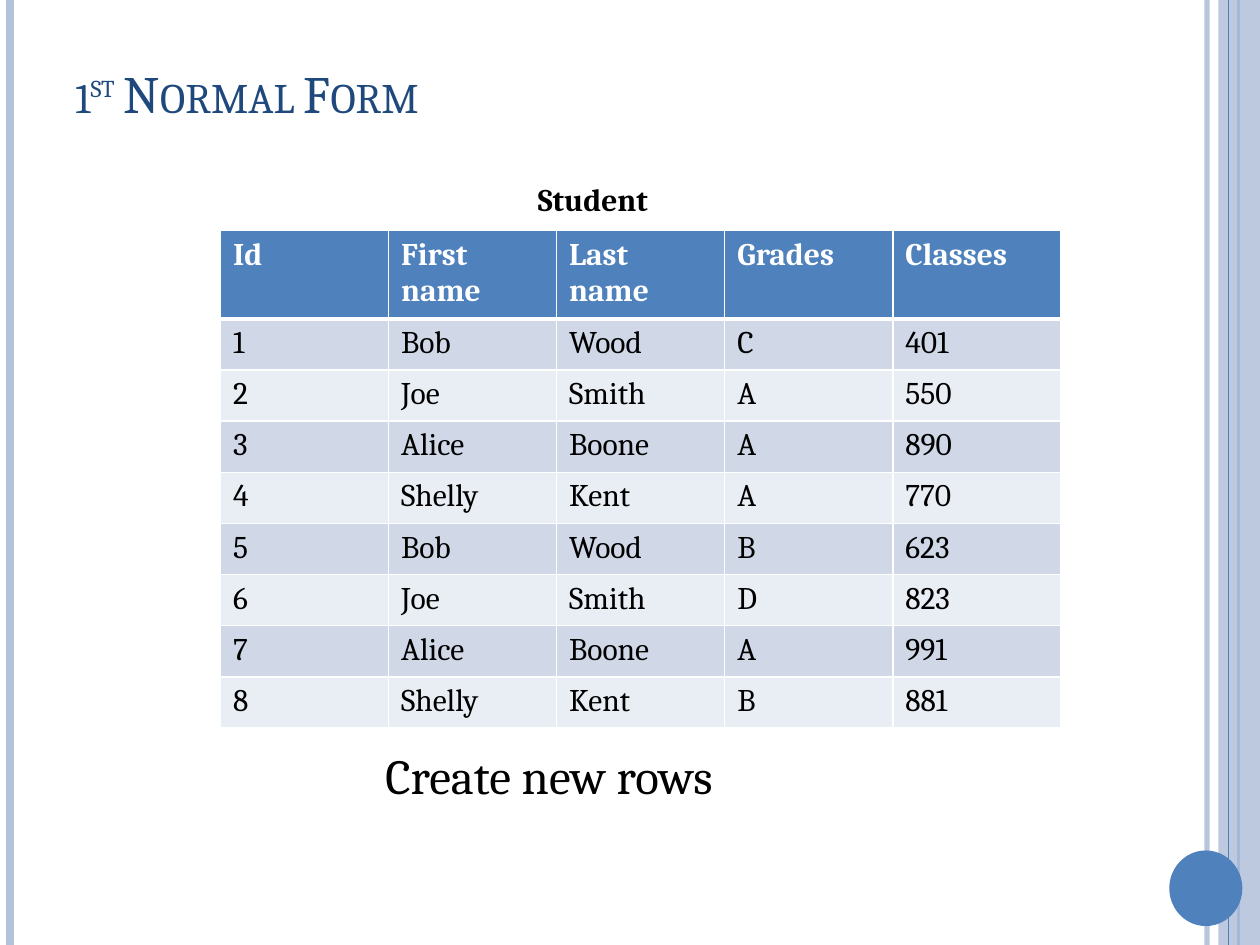
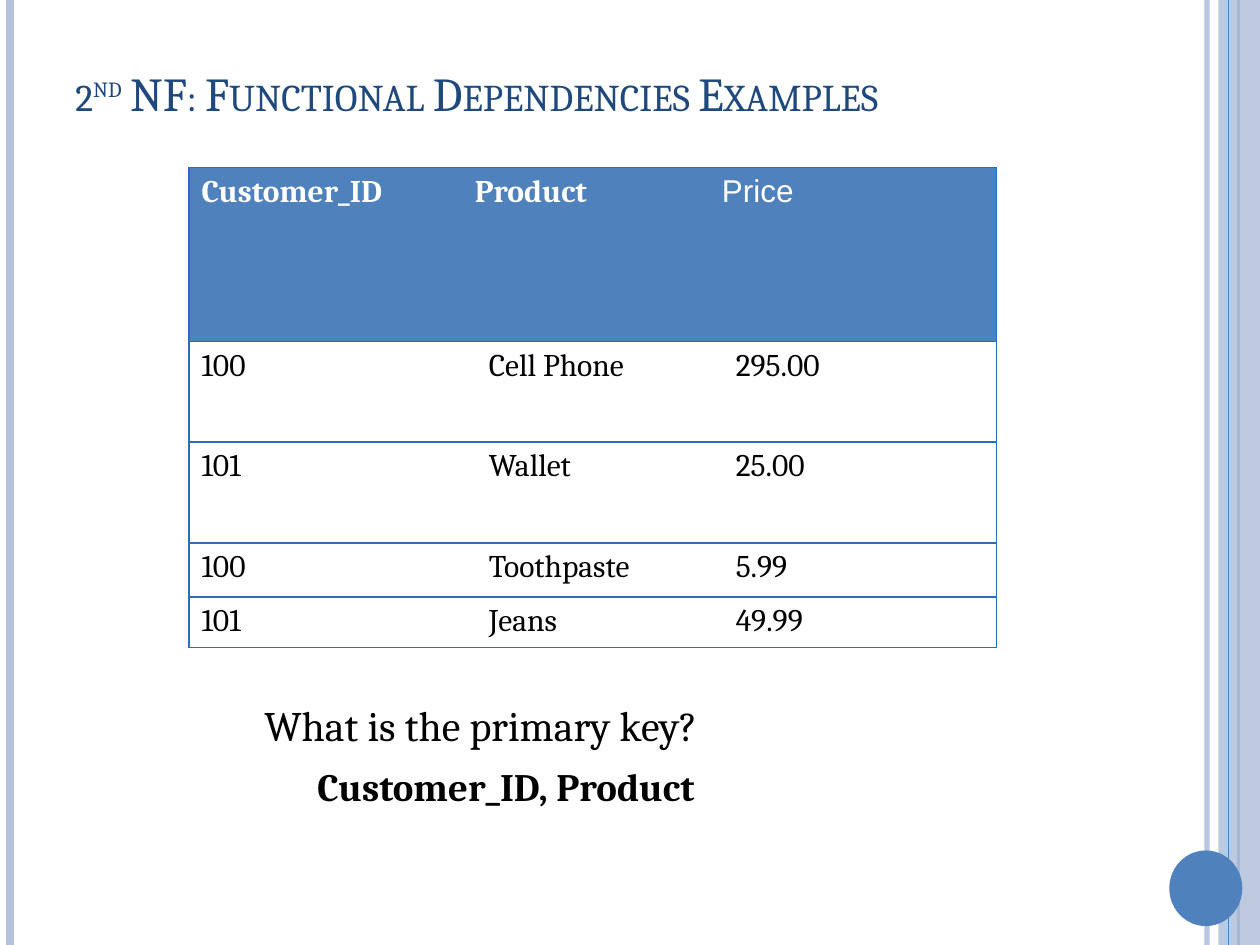
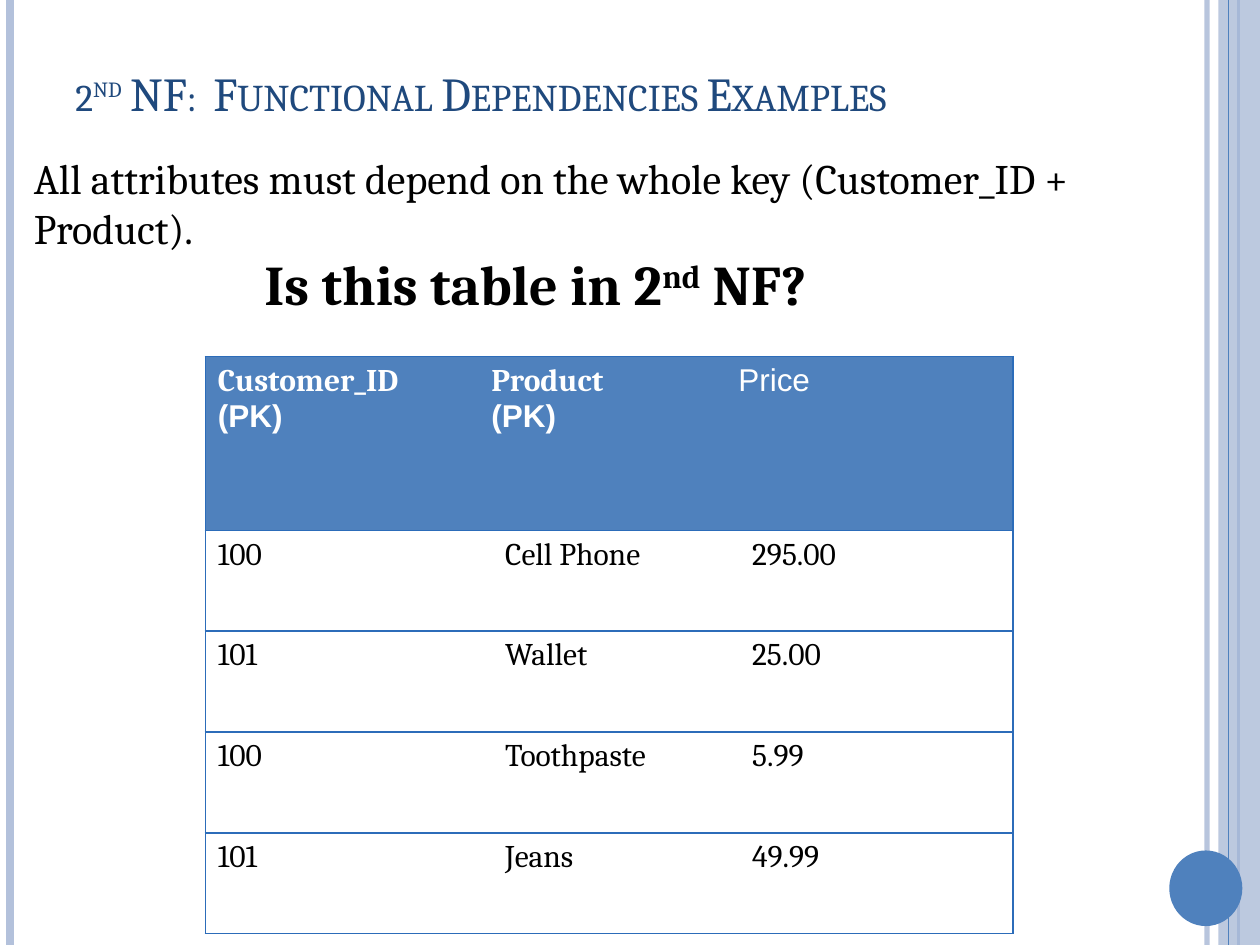
from dataclasses import dataclass, replace
from typing import Sequence

from lxml import etree
from pptx import Presentation
from pptx.dml.color import RGBColor
from pptx.enum.shapes import MSO_CONNECTOR, MSO_SHAPE
from pptx.enum.text import MSO_ANCHOR
from pptx.oxml.ns import qn
from pptx.util import Inches, Pt

STRAIGHT = MSO_CONNECTOR.STRAIGHT
RECTANGLE = MSO_SHAPE.RECTANGLE
OVAL = MSO_SHAPE.OVAL
TOP = MSO_ANCHOR.TOP
MIDDLE = MSO_ANCHOR.MIDDLE
BLANK_LAYOUT = 6
WIDTH, HEIGHT = 10, 7.5


@dataclass(frozen=True)
class TextStyle:
    size: float
    color: str = "000000"
    bold: bool = False
    font: str = "Cambria"
    small_caps: bool = False
    space_before: float = 0


@dataclass(frozen=True)
class Theme:
    accent: str = "4F81BD"
    band: str = "B3C1DB"
    white: str = "FFFFFF"
    grid: str = "2C6CB9"
    stripes: tuple[str, str] = ("D0D8E8", "E9EDF4")
    title: TextStyle = TextStyle(30, "1F497D", small_caps=True)
    long_title: TextStyle = TextStyle(27, "1F497D", small_caps=True)
    cell: TextStyle = TextStyle(18)
    caption: TextStyle = TextStyle(18, bold=True)
    header: TextStyle = TextStyle(18, "FFFFFF", bold=True)
    key_mark: TextStyle = TextStyle(18, "FFFFFF", bold=True, font="Arial")
    plain_header: TextStyle = TextStyle(18, "FFFFFF", font="Arial")
    note: TextStyle = TextStyle(28)
    body: TextStyle = TextStyle(24, space_before=6)
    answer: TextStyle = TextStyle(22.2, bold=True, space_before=6)
    question: TextStyle = TextStyle(32, bold=True, space_before=6)


THEME = Theme()


@dataclass(frozen=True)
class Frame:
    left: float
    top: float
    width: float
    height: float

    def inches(self) -> tuple:
        return tuple(map(Inches, (self.left, self.top, self.width, self.height)))


@dataclass(frozen=True)
class Rule:
    x: float
    color: str
    weight: float
    opacity: int = 100


@dataclass(frozen=True)
class Border:
    color: str
    weight: float


@dataclass(frozen=True)
class Line:
    text: str
    style: TextStyle


RULES_BEHIND_BAND = (
    Rule(9.58, THEME.band, 3, 93),
    Rule(0.08, THEME.band, 4.5),
    Rule(9.83, THEME.accent, 1.5),
)
RULE_OVER_BAND = Rule(9.75, THEME.accent, 0.75)
BAND = Frame(9.67, 0, 0.33, HEIGHT)
BADGE = Frame(9.28, 6.75, 0.58, 0.6)
TITLE = Frame(0.5, 0.3, 8.67, 0.87)

STUDENT_HEADERS = ("Id", "First name", "Last name", "Grades", "Classes")
STUDENTS = (
    ("1", "Bob", "Wood", "C", "401"),
    ("2", "Joe", "Smith", "A", "550"),
    ("3", "Alice", "Boone", "A", "890"),
    ("4", "Shelly", "Kent", "A", "770"),
    ("5", "Bob", "Wood", "B", "623"),
    ("6", "Joe", "Smith", "D", "823"),
    ("7", "Alice", "Boone", "A", "991"),
    ("8", "Shelly", "Kent", "B", "881"),
)
PURCHASES = (
    ("100", "Cell Phone", "295.00"),
    ("101", "Wallet", "25.00"),
    ("100", "Toothpaste", "5.99"),
    ("101", "Jeans", "49.99"),
)
PURCHASE_COLUMNS = (2.17, 1.96, 2.28)
PURCHASE_INDENT = 0.11
CUSTOMER = Line("Customer_ID", THEME.header)
PRODUCT = Line("Product", THEME.header)
PRICE = Line("Price", THEME.plain_header)
KEY_MARK = Line("(PK)", THEME.key_mark)


def rgb(color: str) -> RGBColor:
    return RGBColor.from_string(color)


def set_opacity(properties, percent: int) -> None:
    if percent < 100:
        color = next(properties.iter(qn("a:srgbClr")))
        etree.SubElement(color, qn("a:alpha")).set("val", str(percent * 1000))


def write(para, text: str, style: TextStyle) -> None:
    """Fill a paragraph; text between carets is raised."""
    if style.space_before:
        para.space_before = Pt(style.space_before)
    for index, part in enumerate(text.split("^")):
        span = para.add_run()
        span.text = part
        span.font.size = Pt(style.size)
        span.font.name = style.font
        span.font.bold = style.bold
        span.font.color.rgb = rgb(style.color)
        properties = span.font._element
        if style.small_caps:
            properties.set("cap", "small")
        if index % 2:
            properties.set("baseline", "30000")


def add_text(page, frame: Frame, text: str, style: TextStyle, anchor=TOP) -> None:
    box = page.shapes.add_textbox(*frame.inches())
    box.text_frame.word_wrap = True
    box.text_frame.vertical_anchor = anchor
    write(box.text_frame.paragraphs[0], text, style)


def add_rule(page, rule: Rule) -> None:
    x = Inches(rule.x)
    connector = page.shapes.add_connector(STRAIGHT, x, 0, x, Inches(HEIGHT))
    connector.line.color.rgb = rgb(rule.color)
    connector.line.width = Pt(rule.weight)
    properties = connector._element.spPr
    set_opacity(properties, rule.opacity)
    etree.SubElement(properties, qn("a:effectLst"))


def add_block(page, kind, frame: Frame, color: str, opacity: int = 100) -> None:
    shape = page.shapes.add_shape(kind, *frame.inches())
    shape.shadow.inherit = False
    shape.fill.solid()
    shape.fill.fore_color.rgb = rgb(color)
    shape.line.fill.background()
    set_opacity(shape._element.spPr, opacity)


def add_page(deck, title: str, style: TextStyle):
    """Add a slide with the shared side bands, badge and title."""
    page = deck.slides.add_slide(deck.slide_layouts[BLANK_LAYOUT])
    for rule in RULES_BEHIND_BAND:
        add_rule(page, rule)
    add_block(page, RECTANGLE, BAND, THEME.band, 87)
    add_rule(page, RULE_OVER_BAND)
    add_block(page, OVAL, BADGE, THEME.accent)
    add_text(page, TITLE, title, style, MIDDLE)
    return page


def set_borders(cell, borders: dict[str, Border | None]) -> None:
    """Set the borders by side, in the order L, R, T, B."""
    properties = cell._tc.get_or_add_tcPr()
    for index, (side, border) in enumerate(borders.items()):
        line = etree.Element(qn(f"a:ln{side}"))
        if border:
            line.set("w", str(Pt(border.weight)))
            fill = etree.SubElement(line, qn("a:solidFill"))
            etree.SubElement(fill, qn("a:srgbClr")).set("val", border.color)
        else:
            etree.SubElement(line, qn("a:noFill"))
        properties.insert(index, line)


def fill_cell(cell, lines: Sequence[Line], color: str | None, indent: float = 0) -> None:
    if color:
        cell.fill.solid()
        cell.fill.fore_color.rgb = rgb(color)
    else:
        cell.fill.background()
    frame = cell.text_frame
    for index, line in enumerate(lines):
        para = frame.add_paragraph() if index else frame.paragraphs[0]
        write(para, line.text, line.style)
        if indent:
            para._p.get_or_add_pPr().set("marL", str(Inches(indent)))


def add_grid(page, left: float, top: float, widths: Sequence[float], heights: Sequence[float]):
    frame = Frame(left, top, sum(widths), sum(heights))
    table = page.shapes.add_table(len(heights), len(widths), *frame.inches()).table
    table.horz_banding = False
    for column, width in zip(table.columns, widths):
        column.width = Inches(width)
    for row, height in zip(table.rows, heights):
        row.height = Inches(height)
    return table


def add_student_table(page) -> None:
    header_height, table_height, table_width = 0.69, 3.94, 6.67
    row_height = (table_height - header_height) / len(STUDENTS)
    columns = len(STUDENT_HEADERS)
    table = add_grid(page, 1.75, 1.83, [table_width / columns] * columns,
                     [header_height] + [row_height] * len(STUDENTS))
    thin, thick = Border(THEME.white, 1), Border(THEME.white, 3)
    for r, values in enumerate((STUDENT_HEADERS, *STUDENTS)):
        style = THEME.cell if r else THEME.header
        color = THEME.stripes[(r - 1) % 2] if r else THEME.accent
        for c, value in enumerate(values):
            cell = table.cell(r, c)
            fill_cell(cell, [Line(value, style)], color)
            set_borders(cell, {"L": thin, "R": thin,
                               "T": thick if r == 1 else thin,
                               "B": thin if r else thick})


def add_purchase_table(page, left: float, top: float, headers: Sequence[Sequence[Line]],
                       heights: Sequence[float]) -> None:
    table = add_grid(page, left, top, PURCHASE_COLUMNS, heights)
    last = len(PURCHASE_COLUMNS) - 1
    edge = Border(THEME.grid, 1)
    body = [[[Line(value, THEME.cell)] for value in row] for row in PURCHASES]
    for r, row in enumerate((headers, *body)):
        for c, lines in enumerate(row):
            cell = table.cell(r, c)
            fill_cell(cell, lines, None if r else THEME.accent,
                      PURCHASE_INDENT if r and c else 0)
            set_borders(cell, {"L": None if c else edge,
                               "R": edge if c == last else None,
                               "T": edge, "B": edge})


def add_first_form(deck) -> None:
    page = add_page(deck, "1^st^ Normal Form", THEME.title)
    add_text(page, Frame(4.17, 1.38, 1.5, 0.4), "Student", THEME.caption)
    add_text(page, Frame(2.96, 5.87, 3.75, 0.57), "Create new rows", THEME.note)
    add_student_table(page)


def add_primary_key(deck) -> None:
    page = add_page(deck, "2^nd^ NF: Functional Dependencies Examples", THEME.long_title)
    add_purchase_table(page, 1.5, 1.33, ([CUSTOMER], [PRODUCT], [PRICE]),
                       (1.38, 0.8, 0.8, 0.43, 0.39))
    add_text(page, Frame(2, 5.5, 4.83, 0.58), "What is the primary key?", THEME.body)
    add_text(page, Frame(2.42, 6, 3.8, 0.58), "Customer_ID, Product", THEME.answer)


def add_whole_key(deck) -> None:
    page = add_page(deck, "2^nd^ NF:  Functional Dependencies Examples", THEME.long_title)
    marked_price = replace(PRICE, text="Price")
    add_purchase_table(page, 1.63, 2.83,
                       ([CUSTOMER, KEY_MARK], [PRODUCT, KEY_MARK], [marked_price]),
                       [1.38] + [0.8] * len(PURCHASES))
    add_text(page, Frame(0.17, 1.16, 9.58, 0.92),
             "All attributes must depend on the whole key (Customer_ID + Product).", THEME.body)
    add_text(page, Frame(2, 1.93, 6.67, 0.71), "Is this table in 2^nd^ NF?", THEME.question)


def main() -> None:
    deck = Presentation()
    deck.slide_width, deck.slide_height = Inches(WIDTH), Inches(HEIGHT)
    add_first_form(deck)
    add_primary_key(deck)
    add_whole_key(deck)
    deck.save("out.pptx")


if __name__ == "__main__":
    main()
